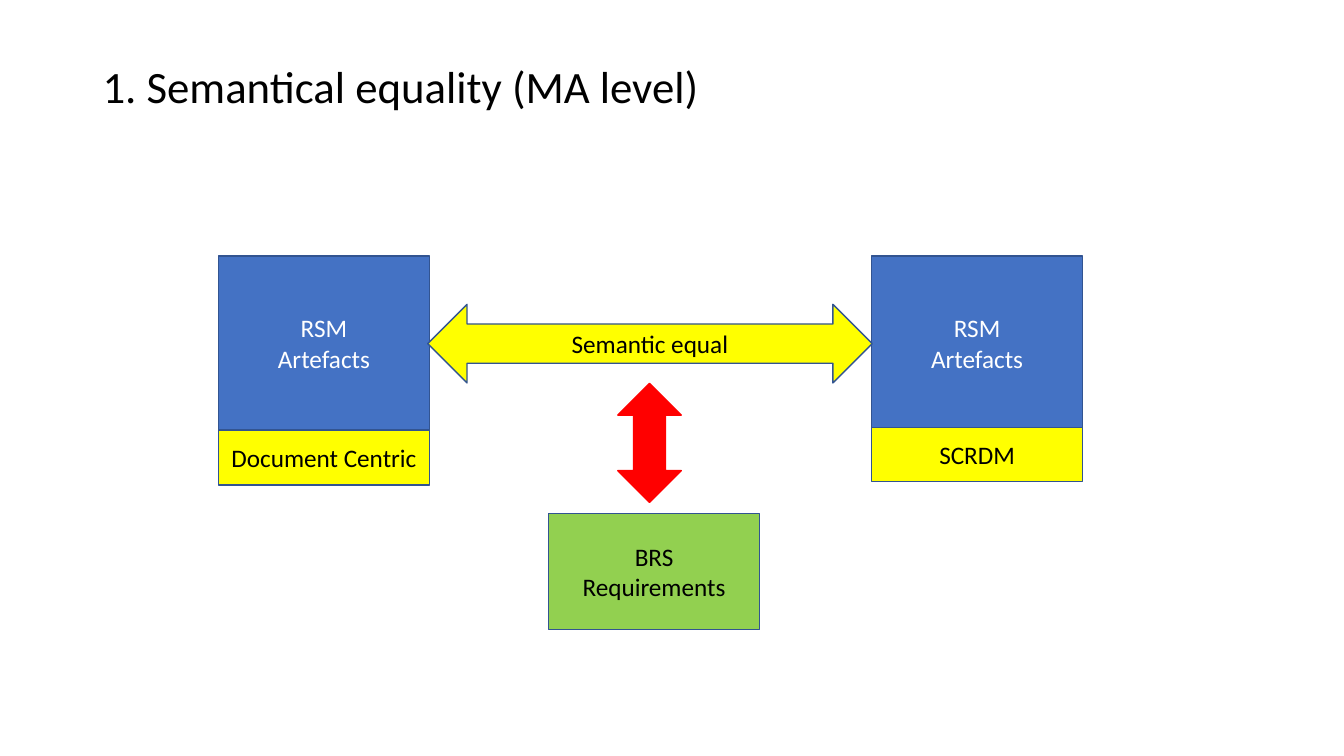
import pptx
import pptx.util
import pptx.dml.color
import pptx.enum.shapes
import pptx.enum.text

Cm = pptx.util.Cm
Pt = pptx.util.Pt
Kind = pptx.enum.shapes.MSO_SHAPE
Align = pptx.enum.text.PP_ALIGN
Anchor = pptx.enum.text.MSO_ANCHOR

COLORS = {
    "blue": "4472C4",
    "edge": "325491",
    "yellow": "FFFF00",
    "green": "92D050",
    "red": "FF0000",
    "white": "FFFFFF",
    "black": "000000",
}


def color(name):
    return pptx.dml.color.RGBColor.from_string(COLORS[name])


class Deck:
    font = "Calibri"
    size = 18

    def __init__(self):
        self.file = pptx.Presentation()
        self.file.slide_width = Cm(33.87)
        self.file.slide_height = Cm(19.05)
        self.slide = self.file.slides.add_slide(self.file.slide_layouts[5])

    def label(self, frame, text, size, ink, align):
        frame.text = text
        frame.word_wrap = True
        frame.vertical_anchor = Anchor.MIDDLE
        for para in frame.paragraphs:
            para.alignment = align
            para.font.name = self.font
            para.font.size = Pt(size)
            para.font.color.rgb = color(ink)

    def title(self, text, left, top, width, height):
        title = self.slide.shapes.title
        title.left, title.top = Cm(left), Cm(top)
        title.width, title.height = Cm(width), Cm(height)
        frame = title.text_frame
        self.label(frame, text, 32, "black", Align.LEFT)
        frame.auto_size = pptx.enum.text.MSO_AUTO_SIZE.NONE
        frame.margin_bottom = Cm(1.37)
        frame.paragraphs[0].line_spacing = 0.9

    def shape(self, kind, left, top, width, height, fill,
              text="", ink="black", edge="edge"):
        shape = self.slide.shapes.add_shape(
            kind, Cm(left), Cm(top), Cm(width), Cm(height))
        shape.shadow.inherit = False
        shape.fill.solid()
        shape.fill.fore_color.rgb = color(fill)
        shape.line.color.rgb = color(edge)
        shape.line.width = Pt(1)
        if text:
            self.label(shape.text_frame, text, self.size, ink, Align.CENTER)

    def save(self):
        self.file.save("out.pptx")


def main():
    deck = Deck()
    deck.title("1. Semantical equality (MA level)", 2.33, 1.02, 29.21, 3.68)

    # Artefact boxes, each with a label at its foot
    width = 5.31
    sides = [(5.51, 10.85, "Document Centric"), (21.97, 10.77, "SCRDM")]
    for left, foot, name in sides:
        deck.shape(Kind.RECTANGLE, left, 6.45, width, 4.39, "blue",
                   "RSM\nArtefacts", "white")
        deck.shape(Kind.RECTANGLE, left, foot, width, 1.37, "yellow", name)

    # Link between the two sides
    deck.shape(Kind.LEFT_RIGHT_ARROW, 10.78, 7.67, 11.2, 1.98, "yellow",
               "Semantic equal")

    # Requirements and their link
    deck.shape(Kind.RECTANGLE, 13.83, 12.94, width, 2.92, "green",
               "BRS\nRequirements")
    deck.shape(Kind.UP_DOWN_ARROW, 15.57, 9.66, 1.6, 3, "red", edge="red")

    deck.save()


if __name__ == "__main__":
    main()
